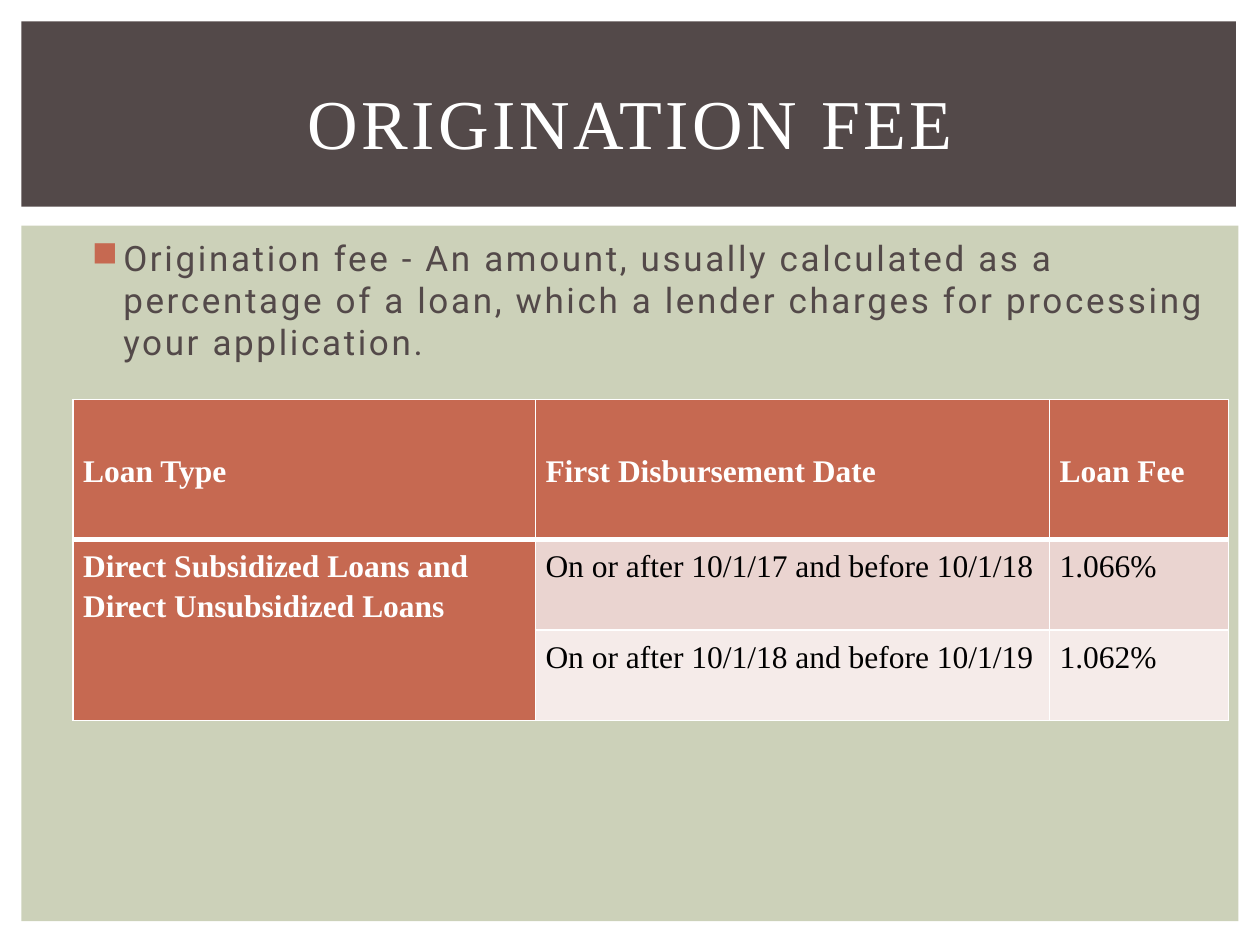
from lxml.etree import SubElement as Sub
from pptx import Presentation
from pptx.dml.color import RGBColor as Rgb
from pptx.enum.shapes import MSO_SHAPE as Kind
from pptx.enum.text import MSO_ANCHOR as Anchor, PP_ALIGN as Align
from pptx.oxml.ns import qn
from pptx.util import Inches, Pt

WIDE, HIGH = 10, 7.5
BROWN = Rgb(0x53, 0x49, 0x49)
SAGE = Rgb(0xCC, 0xD1, 0xB9)
RUST = Rgb(0xC6, 0x69, 0x51)
ROSE = Rgb(0xEA, 0xD4, 0xD0)
BLUSH = Rgb(0xF5, 0xEB, 0xE9)
WHITE = Rgb(0xFF, 0xFF, 0xFF)
BLACK = Rgb(0, 0, 0)
SERIF = "Times New Roman"

COLS = (3.67, 4.08, 1.42)
ROWS = (1.11, 0.72, 0.72)
FILLS = (RUST, ROSE, BLUSH)
LOANS = (
    ("Loan Type", "First Disbursement Date", "Loan Fee"),
    ("Direct Subsidized Loans and Direct Unsubsidized Loans",
     "On or after 10/1/17 and before 10/1/18", "1.066%"),
    ("", "On or after 10/1/18 and before 10/1/19", "1.062%"),
)


def apply(item, values):
    for name, value in values.items():
        setattr(item, name, value)


def place(*box):
    return [Inches(part) for part in box]


def write(frame, text, color, font, para):
    line = frame.paragraphs[0]
    apply(line, para)
    run = line.add_run()
    run.text = text
    apply(run.font, font)
    run.font.color.rgb = color
    return line, run


def add_panel(slide, box, color):
    panel = slide.shapes.add_shape(Kind.RECTANGLE, *place(*box))
    panel.shadow.inherit = False
    panel.fill.solid()
    panel.fill.fore_color.rgb = color
    panel.line.fill.background()


def add_text(slide, box, text, color, gap, font, para, anchor):
    frame = slide.shapes.add_textbox(*place(*box)).text_frame
    apply(frame, {"word_wrap": True, "vertical_anchor": anchor})
    line, run = write(frame, text, color, font, para)
    run.font._element.set("spc", str(int(gap * 100)))
    return line


def add_bullet(line, color, left, hang):
    props = line._p.get_or_add_pPr()
    props.set("marL", str(Inches(left)))
    props.set("indent", str(Inches(hang)))
    Sub(Sub(props, qn("a:buClr")), qn("a:srgbClr"), val=str(color))
    Sub(props, qn("a:buChar"), char="■")


def add_edges(cell, widths):
    props = cell._tc.get_or_add_tcPr()
    for side, width in zip("LRTB", widths):
        edge = Sub(props, qn(f"a:ln{side}"), w=str(Pt(width)))
        Sub(Sub(edge, qn("a:solidFill")), qn("a:srgbClr"), val=str(WHITE))


def add_cell(cell, row, col, text):
    head = row == 0
    label = head or col == 0
    add_edges(cell, (1, 1, 3 if row == 1 else 1, 3 if head else 1))
    cell.fill.solid()
    cell.fill.fore_color.rgb = RUST if label else FILLS[row]
    apply(cell, {
        "margin_left": Inches(0.08), "margin_right": Inches(0.08),
        "margin_top": Inches(0.04), "margin_bottom": Inches(0.04),
        "vertical_anchor": Anchor.MIDDLE if head else Anchor.TOP,
    })
    if text:
        write(cell.text_frame, text, WHITE if label else BLACK,
              {"name": SERIF, "size": Pt(18), "bold": label},
              {"line_spacing": 1.15, "space_after": Pt(10)})


def add_grid(slide, left, top):
    box = place(left, top, sum(COLS), sum(ROWS))
    grid = slide.shapes.add_table(len(ROWS), len(COLS), *box).table
    for col, width in zip(grid.columns, COLS):
        col.width = Inches(width)
    for row, height in zip(grid.rows, ROWS):
        row.height = Inches(height)
    grid.cell(1, 0).merge(grid.cell(2, 0))
    for row, texts in enumerate(LOANS):
        for col, text in enumerate(texts):
            add_cell(grid.cell(row, col), row, col, text)


def main():
    deck = Presentation()
    deck.slide_width, deck.slide_height = place(WIDE, HIGH)
    slide = deck.slides.add_slide(deck.slide_layouts[6])
    add_panel(slide, (0.17, 1.79, 9.66, 5.52), SAGE)
    add_panel(slide, (0.17, 0.17, 9.64, 1.47), BROWN)
    body = add_text(
        slide, (0.58, 1.83, 9.19, 4.82),
        "Origination fee - An amount, usually calculated as a percentage "
        "of a loan, which a lender charges for processing your application.",
        BROWN, 1.5, {"name": "Roboto", "size": Pt(20)},
        {"space_before": Pt(4)}, Anchor.TOP)
    add_bullet(body, RUST, 0.3, -0.25)
    add_text(slide, (0.42, 0.39, 9.17, 1.15), "ORIGINATION FEE", WHITE, 2,
             {"name": SERIF, "size": Pt(40)},
             {"alignment": Align.CENTER}, Anchor.MIDDLE)
    add_grid(slide, 0.58, 3.17)
    deck.save("out.pptx")


if __name__ == "__main__":
    main()
